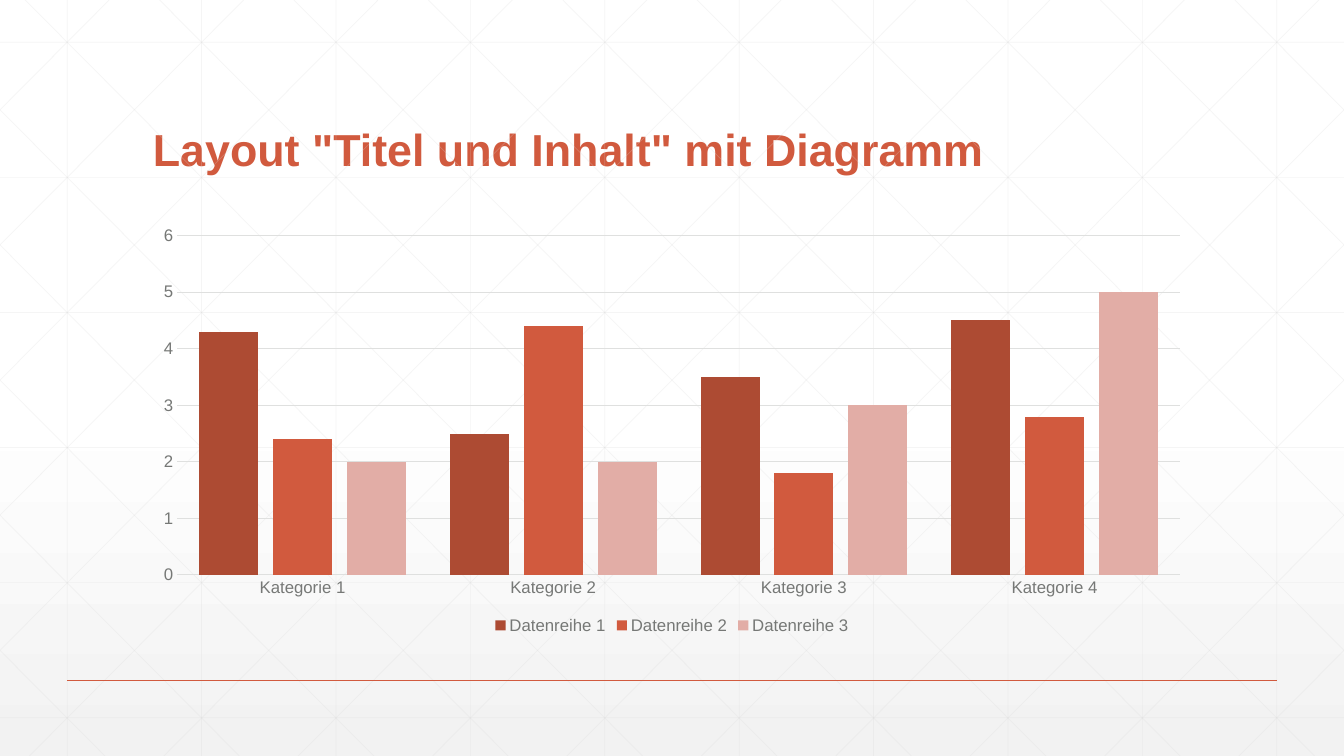
"""Build a slide with a clustered column chart over a faint lattice."""
from dataclasses import dataclass

from lxml import etree
from pptx import Presentation
from pptx.chart.axis import CategoryAxis, ValueAxis
from pptx.chart.chart import Chart
from pptx.chart.data import CategoryChartData
from pptx.dml.color import RGBColor
from pptx.enum.chart import XL_CHART_TYPE, XL_LEGEND_POSITION, XL_TICK_MARK
from pptx.enum.shapes import MSO_CONNECTOR
from pptx.enum.text import MSO_ANCHOR, MSO_AUTO_SIZE, PP_ALIGN
from pptx.oxml.ns import qn
from pptx.slide import Slide
from pptx.text.text import Font
from pptx.util import Pt

COLUMNS = XL_CHART_TYPE.COLUMN_CLUSTERED
LEGEND_BOTTOM = XL_LEGEND_POSITION.BOTTOM
NO_TICKS = XL_TICK_MARK.NONE
STRAIGHT = MSO_CONNECTOR.STRAIGHT
BOTTOM = MSO_ANCHOR.BOTTOM
LEFT = PP_ALIGN.LEFT
NO_AUTOFIT = MSO_AUTO_SIZE.NONE

WIDTH, HEIGHT = 960, 540
CONTENT_LEFT, CONTENT_WIDTH = 102, 756
TITLE_ONLY_LAYOUT = 5
LATTICE_STEP = 96


@dataclass(frozen=True)
class Theme:
    """Colours, font and type sizes of the slide."""
    accent: str = "D15A3E"
    lattice: str = "D9D9D9"
    chart_text: str = "767876"
    chart_line: str = "DFE0DF"
    background_top: str = "FFFFFF"
    background_bottom: str = "F2F2F2"
    font: str = "Arial"
    title_size: float = 32
    chart_size: float = 12


@dataclass(frozen=True)
class Segment:
    """A straight line between two points."""
    start_x: float
    start_y: float
    end_x: float
    end_y: float


@dataclass(frozen=True)
class Series:
    """A named row of chart values with its colour."""
    name: str
    values: tuple[float, ...]
    color: str


THEME = Theme()
CATEGORIES = [f"Kategorie {number}" for number in range(1, 5)]
SERIES = [
    Series("Datenreihe 1", (4.3, 2.5, 3.5, 4.5), "AD4B33"),
    Series("Datenreihe 2", (2.4, 4.4, 1.8, 2.8), THEME.accent),
    Series("Datenreihe 3", (2, 2, 3, 5), "E2ADA6"),
]


def rgb(value: str) -> RGBColor:
    """Turn a hex string into a colour."""
    return RGBColor.from_string(value)


def lattice_segments() -> list[Segment]:
    """Work out the verticals, horizontals and mirrored diagonals."""
    segments = [Segment(x, 0, x, HEIGHT) for x in range(48, WIDTH, LATTICE_STEP)]
    for row in range(6):
        y = 30.24 + 96.48 * row
        segments.append(Segment(0, y, WIDTH, y))
    run = 537
    for column in range(-5, 10):
        top_x = 18 + LATTICE_STEP * column
        left, right = max(0, top_x), min(WIDTH, top_x + run)
        start_y, end_y = ((x - top_x) * HEIGHT / run for x in (left, right))
        segments.append(Segment(left, start_y, right, end_y))
        segments.append(Segment(WIDTH - left, start_y, WIDTH - right, end_y))
    return segments


def draw_segment(page: Slide, segment: Segment, color: str, weight: float,
                 opacity: int = 100) -> None:
    """Draw one line without shadow."""
    connector = page.shapes.add_connector(
        STRAIGHT, Pt(segment.start_x), Pt(segment.start_y),
        Pt(segment.end_x), Pt(segment.end_y))
    connector.line.color.rgb = rgb(color)
    connector.line.width = Pt(weight)
    properties = connector._element.spPr
    if opacity < 100:
        paint = properties.find(".//" + qn("a:srgbClr"))
        etree.SubElement(paint, qn("a:alpha")).set("val", str(opacity * 1000))
    etree.SubElement(properties, qn("a:effectLst"))


def paint_background(page: Slide) -> None:
    """Fade the lower half of the background to grey."""
    fill = page.background.fill
    fill.gradient()
    fill.gradient_angle = 270
    top, bottom = fill.gradient_stops
    top.position, bottom.position = 0.53, 1
    top.color.rgb = rgb(THEME.background_top)
    bottom.color.rgb = rgb(THEME.background_bottom)


def style_font(font: Font, size: float, color: str, bold: bool = False) -> None:
    """Set typeface, size, colour and weight."""
    font.name = THEME.font
    font.size = Pt(size)
    font.color.rgb = rgb(color)
    font.bold = bold


def write_title(page: Slide, text: str) -> None:
    """Place and format the title placeholder."""
    title = page.shapes.title
    title.left, title.top = Pt(CONTENT_LEFT), Pt(39.6)
    title.width, title.height = Pt(CONTENT_WIDTH), Pt(90)
    frame = title.text_frame
    frame.text = text
    frame.word_wrap = True
    frame.auto_size = NO_AUTOFIT
    frame.vertical_anchor = BOTTOM
    para = frame.paragraphs[0]
    para.alignment = LEFT
    para.line_spacing = 0.9
    style_font(para.runs[0].font, THEME.title_size, THEME.accent, bold=True)


def style_axis(axis: CategoryAxis | ValueAxis) -> None:
    """Give an axis its labels and remove the tick marks."""
    axis.major_tick_mark = axis.minor_tick_mark = NO_TICKS
    style_font(axis.tick_labels.font, THEME.chart_size, THEME.chart_text)
    axis.format.line.color.rgb = rgb(THEME.chart_line)
    axis.format.line.width = Pt(0.75)


def style_chart(chart: Chart) -> None:
    """Format axes, legend and columns."""
    chart.has_title = False
    style_font(chart.font, THEME.chart_size, THEME.chart_text)
    style_axis(chart.category_axis)
    value_axis = chart.value_axis
    style_axis(value_axis)
    value_axis.format.line.fill.background()
    value_axis.minimum_scale, value_axis.maximum_scale = 0, 6
    value_axis.major_unit = 1
    grid_line = value_axis.major_gridlines.format.line
    grid_line.color.rgb = rgb(THEME.chart_line)
    grid_line.width = Pt(0.75)
    chart.has_legend = True
    chart.legend.position = LEGEND_BOTTOM
    chart.legend.include_in_layout = False
    style_font(chart.legend.font, THEME.chart_size, THEME.chart_text)
    plot = chart.plots[0]
    plot.vary_by_categories = False
    plot.gap_width, plot.overlap = 75, -25
    for columns, series in zip(plot.series, SERIES):
        columns.format.fill.solid()
        columns.format.fill.fore_color.rgb = rgb(series.color)


def add_columns(page: Slide) -> None:
    """Add the column chart."""
    data = CategoryChartData()
    data.categories = CATEGORIES
    for series in SERIES:
        data.add_series(series.name, series.values)
    frame = page.shapes.add_chart(COLUMNS, Pt(CONTENT_LEFT), Pt(156),
                                  Pt(CONTENT_WIDTH), Pt(300), data)
    style_chart(frame.chart)


def main() -> None:
    """Build and save the deck."""
    deck = Presentation()
    deck.slide_width, deck.slide_height = Pt(WIDTH), Pt(HEIGHT)
    page = deck.slides.add_slide(deck.slide_layouts[TITLE_ONLY_LAYOUT])
    paint_background(page)
    for segment in lattice_segments():
        draw_segment(page, segment, THEME.lattice, 0.5, opacity=25)
    draw_segment(page, Segment(48, 486, 912, 486), THEME.accent, 1)
    write_title(page, 'Layout "Titel und Inhalt" mit Diagramm')
    add_columns(page)
    deck.save("out.pptx")


if __name__ == "__main__":
    main()
